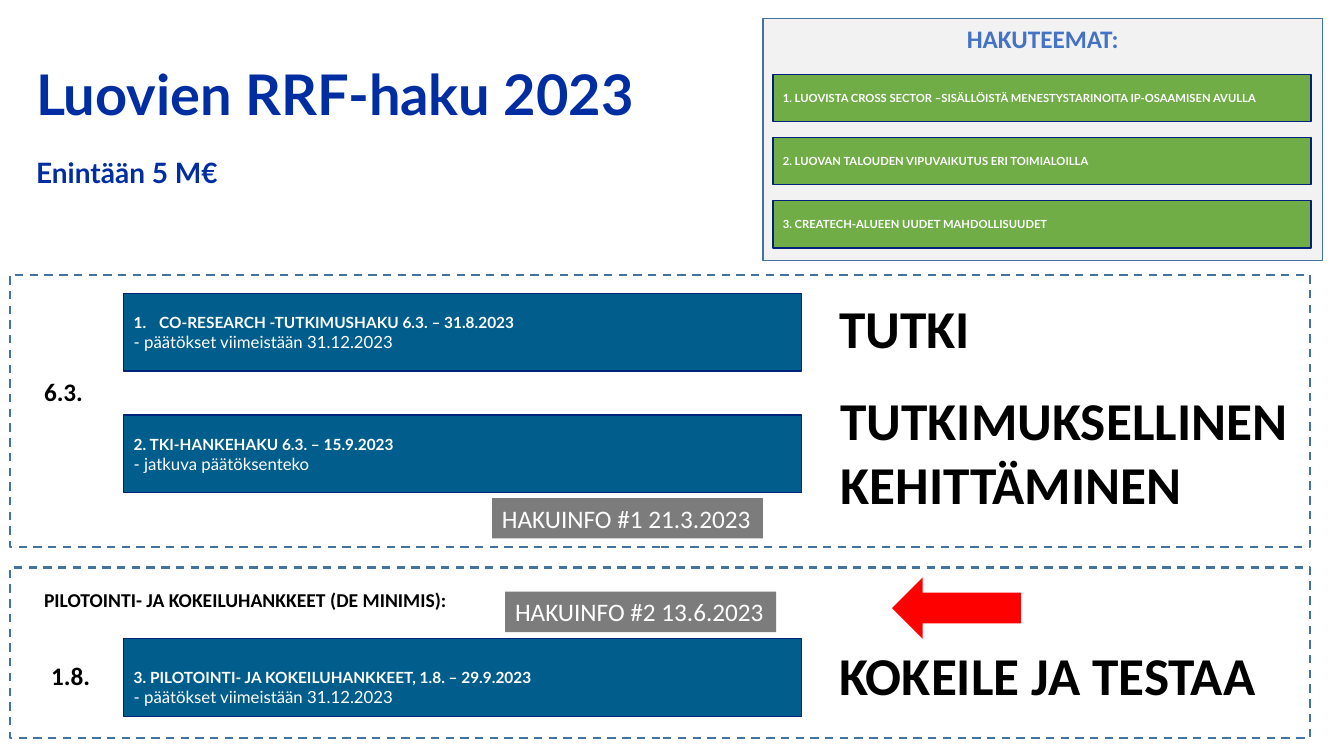
from lxml.etree import SubElement
from pptx import Presentation
from pptx.dml.color import RGBColor
from pptx.enum.dml import MSO_LINE
from pptx.enum.shapes import MSO_SHAPE
from pptx.enum.text import MSO_ANCHOR, MSO_AUTO_SIZE, PP_ALIGN
from pptx.oxml.ns import qn
from pptx.util import Cm, Pt

HUES = {
    "navy": "002EA2", "edge": "002278", "steel": "43739E", "blue": "005D8C",
    "green": "70AD47", "pale": "F2F2F2", "gray": "7C7C7C", "sky": "4472C4",
    "red": "FF0000", "black": "000000", "white": "FFFFFF",
}
FORMS = {
    "title": {"name": "Lato", "size": Pt(40), "bold": True, "color": "navy"},
    "sub": {"name": "Lato", "size": Pt(20), "bold": True, "color": "navy"},
    "theme": {"name": "Lato", "size": Pt(8), "bold": True, "color": "white"},
    "call": {"name": "Lato", "size": Pt(11), "bold": True, "color": "white"},
    "note": {"name": "Lato", "size": Pt(12), "bold": False, "color": "white"},
    "head": {"name": "Calibri", "size": Pt(18), "bold": True, "color": "sky"},
    "tag": {"name": "Calibri", "size": Pt(18), "bold": False, "color": "white"},
    "date": {"name": "Calibri", "size": Pt(18), "bold": True, "color": "black"},
    "label": {"name": "Calibri", "size": Pt(14), "bold": True, "color": "black"},
    "goal": {"name": "Calibri", "size": Pt(38), "bold": True, "color": "black"},
}
THEMES = [
    "1. LUOVISTA CROSS SECTOR –SISÄLLÖISTÄ MENESTYSTARINOITA IP-OSAAMISEN AVULLA",
    "2. LUOVAN TALOUDEN VIPUVAIKUTUS ERI TOIMIALOILLA",
    "3. CREATECH-ALUEEN UUDET MAHDOLLISUUDET",
]
CALLS = [
    (7.39, 0.13, "CO-RESEARCH -TUTKIMUSHAKU 6.3. – 31.8.2023",
     "- päätökset viimeistään 31.12.2023"),
    (10.46, 0.13, "2. TKI-HANKEHAKU 6.3. – 15.9.2023", "- jatkuva päätöksenteko"),
    (16.1, 0.63, "3. PILOTOINTI- JA KOKEILUHANKKEET, 1.8. – 29.9.2023",
     "- päätökset viimeistään 31.12.2023"),
]
TAGS = [
    (12.4, 12.55, "HAKUINFO #1 21.3.2023"),
    (12.73, 14.91, "HAKUINFO #2 13.6.2023"),
]
WORDS = [
    ("label", (0.86, 14.68, 10.85, 0.86), ["PILOTOINTI- JA KOKEILUHANKKEET (DE MINIMIS):"]),
    ("date", (0.86, 9.35, 1.5, 1.02), ["6.3."]),
    ("date", (1.04, 16.51, 1.5, 1.02), ["1.8."]),
    ("goal", (20.9, 7.32, 3.84, 1.88), ["TUTKI"]),
    ("goal", (20.93, 9.63, 11.89, 3.5), ["TUTKIMUKSELLINEN", "KEHITTÄMINEN"]),
    ("goal", (20.9, 16.05, 11.1, 1.88), ["KOKEILE JA TESTAA"]),
]
FRAMES = [(0.25, 6.93, 32.77, 6.86), (0.25, 14.3, 32.77, 4.29)]


def tint(name):
    """Return the named colour."""
    return RGBColor.from_string(HUES[name])


def write(shape, lines, anchor=MSO_ANCHOR.TOP, align=PP_ALIGN.LEFT, wrap=True):
    """Fill a shape with (form, text) lines and return its paragraphs."""
    frame = shape.text_frame
    frame.word_wrap = wrap
    frame.vertical_anchor = anchor
    if not wrap:
        frame.auto_size = MSO_AUTO_SIZE.SHAPE_TO_FIT_TEXT
    frame.text = "\n".join(text for _, text in lines)
    for para, (form, _) in zip(frame.paragraphs, lines):
        para.alignment = align
        font = para.runs[0].font
        for key, value in FORMS[form].items():
            if key == "color":
                font.color.rgb = tint(value)
            else:
                setattr(font, key, value)
    return frame.paragraphs


def block(slide, area, fill=None, edge=None, width=0.85, kind=MSO_SHAPE.RECTANGLE):
    """Draw a preset shape with an optional fill and edge."""
    shape = slide.shapes.add_shape(kind, *map(Cm, area))
    shape.shadow.inherit = False
    if fill:
        shape.fill.solid()
        shape.fill.fore_color.rgb = tint(fill)
    else:
        shape.fill.background()
    if edge:
        shape.line.color.rgb = tint(edge)
        shape.line.width = Pt(width)
    else:
        shape.line.fill.background()
    return shape


def label(slide, area, lines, **style):
    """Add a text box."""
    box = slide.shapes.add_textbox(*map(Cm, area))
    return box, write(box, lines, **style)


def number(para):
    """Number a paragraph with a hanging indent."""
    props = para._p.get_or_add_pPr()
    props.set("marL", str(Cm(0.64)))
    props.set("indent", str(-Cm(0.64)))
    SubElement(props, qn("a:buFont"), typeface="+mj-lt")
    SubElement(props, qn("a:buAutoNum"), type="arabicPeriod")


def title(slide):
    """Add the heading and its budget line."""
    box, paras = label(
        slide, (0.66, 1.35, 18, 3.68),
        [("title", "Luovien RRF-haku 2023"), ("sub", "Enintään 5 M€")],
        anchor=MSO_ANCHOR.MIDDLE)
    box.text_frame.margin_top = Cm(0.55)
    for para in paras:
        para.line_spacing = Pt(33)
    paras[1].space_before = Pt(12)


def themes(slide):
    """Draw the panel of themes."""
    panel = block(slide, (19.23, 0.46, 14.1, 6.1), "pale", "steel", 1)
    write(panel, [("head", "HAKUTEEMAT:")], align=PP_ALIGN.CENTER)
    for row, text in enumerate(THEMES):
        bar = block(slide, (19.48, 1.88 + 1.59 * row, 13.56, 1.19), "green", "edge")
        write(bar, [("theme", text)], MSO_ANCHOR.MIDDLE)


def calls(slide):
    """Draw the bars of the three calls."""
    for row, (top, inset, name, note) in enumerate(CALLS):
        bar = block(slide, (3.12, top, 17.09, 1.96), "blue", "edge")
        bar.text_frame.margin_top = Cm(inset)
        paras = write(bar, [("call", name), ("note", note)], MSO_ANCHOR.MIDDLE)
        if row == 0:
            number(paras[0])


def main():
    """Build the slide and save it."""
    deck = Presentation()
    deck.slide_width, deck.slide_height = Cm(33.87), Cm(19.05)
    slide = deck.slides.add_slide(deck.slide_layouts[6])
    themes(slide)
    title(slide)
    calls(slide)
    for left, top, text in TAGS:
        tag = block(slide, (left, top, 6.83, 1.02), "gray")
        write(tag, [("tag", text)], wrap=False)
    for area in FRAMES:
        block(slide, area, edge="steel", width=1.5).line.dash_style = MSO_LINE.DASH
    for form, area, lines in WORDS:
        label(slide, area, [(form, text) for text in lines], wrap=False)
    block(slide, (22.48, 14.55, 3.25, 1.55), "red", kind=MSO_SHAPE.LEFT_ARROW)
    deck.save("out.pptx")


if __name__ == "__main__":
    main()
